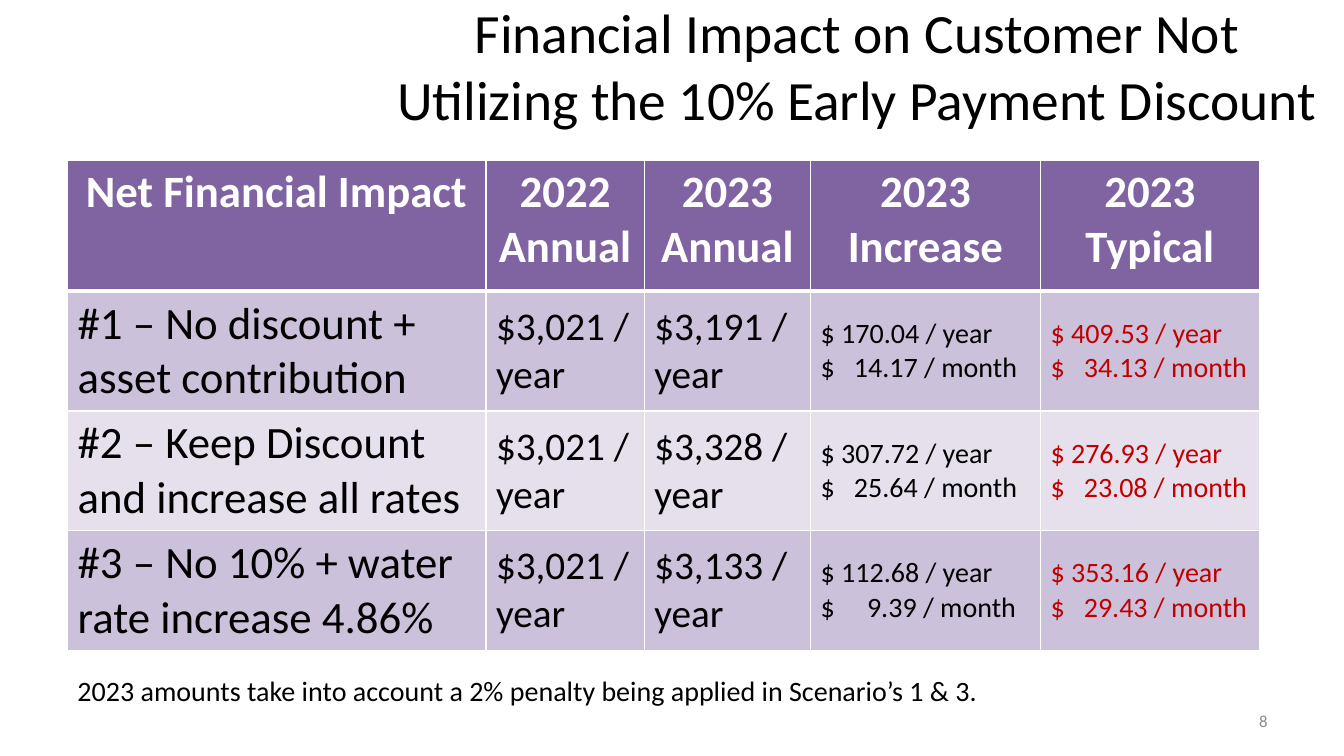
from dataclasses import dataclass
from typing import Optional

from pptx import Presentation
from pptx.dml.color import RGBColor
from pptx.enum.text import MSO_ANCHOR as ANCHOR, MSO_AUTO_SIZE as AUTO, PP_ALIGN as ALIGN
from pptx.oxml.ns import qn
from pptx.util import Inches, Pt
from lxml import etree

BLACK = RGBColor(0x00, 0x00, 0x00)
WHITE = RGBColor(0xFF, 0xFF, 0xFF)
GREY = RGBColor(0x8C, 0x8C, 0x8C)
RED = RGBColor(0xC0, 0x00, 0x00)
PURPLE = RGBColor(0x80, 0x64, 0xA2)
BAND_DARK = RGBColor(0xCC, 0xC1, 0xDA)
BAND_LIGHT = RGBColor(0xE6, 0xE0, 0xEC)
FONT = "Calibri"

COL_WIDTHS = (4.15, 1.57, 1.65, 2.28, 2.17)
HEADER_HEIGHT, ROW_HEIGHT = 1.3, 1.17
HEADERS = ("Net Financial Impact", "2022\nAnnual", "2023\nAnnual", "2023 Increase", "2023\nTypical")


@dataclass(frozen=True)
class Amount:
    year: str
    month: str


@dataclass(frozen=True)
class Scenario:
    name: str
    annual_2022: str
    annual_2023: str
    increase: Amount
    typical: Amount


@dataclass(frozen=True)
class Style:
    size: float
    color: RGBColor = BLACK
    bold: bool = False
    align: Optional[ALIGN] = None


SCENARIOS = (
    Scenario("#1 – No discount + asset contribution", "$3,021", "$3,191",
             Amount("170.04", "14.17"), Amount("409.53", "34.13")),
    Scenario("#2 – Keep Discount and increase all rates", "$3,021", "$3,328",
             Amount("307.72", "25.64"), Amount("276.93", "23.08")),
    Scenario("#3 – No 10% + water rate increase 4.86%", "$3,021", "$3,133",
             Amount("112.68", "9.39"), Amount("353.16", "29.43")),
)
HEADER = Style(32, WHITE, True, ALIGN.CENTER)
BODY = (Style(32), Style(28), Style(28), Style(20), Style(20, RED))


def set_text(tf, text: str, style: Style) -> None:
    tf.text = text
    for p in tf.paragraphs:
        if style.align is not None:
            p.alignment = style.align
        for r in p.runs:
            r.font.name = FONT
            r.font.size = Pt(style.size)
            r.font.bold = style.bold
            r.font.color.rgb = style.color


def add_tab(p, position: float) -> None:
    tabs = etree.SubElement(p._p.get_or_add_pPr(), qn("a:tabLst"))
    etree.SubElement(tabs, qn("a:tab"), pos=str(Inches(position)), algn="l")


def set_border(cell, side: str, width: float) -> None:
    ln = etree.Element(qn(f"a:{side}"), w=str(Pt(width)))
    fill = etree.SubElement(ln, qn("a:solidFill"))
    etree.SubElement(fill, qn("a:srgbClr"), val=str(WHITE))
    tc_pr = cell._tc.get_or_add_tcPr()
    tc_pr.insert(len(tc_pr.findall("*")) - 1, ln)


def fill_cell(cell, text: str, style: Style, fill: RGBColor, row: int) -> None:
    set_text(cell.text_frame, text, style)
    cell.vertical_anchor = ANCHOR.MIDDLE if row else ANCHOR.TOP
    cell.fill.solid()
    cell.fill.fore_color.rgb = fill
    for side in ("lnL", "lnR", "lnT", "lnB"):
        thick = (row, side) in ((0, "lnB"), (1, "lnT"))
        set_border(cell, side, 3 if thick else 1)


def amount_text(amount: Amount) -> str:
    return f"$ {amount.year} / year\n$\t{amount.month} / month"


def add_impact_table(slide) -> None:
    height = HEADER_HEIGHT + ROW_HEIGHT * len(SCENARIOS)
    table = slide.shapes.add_table(len(SCENARIOS) + 1, len(COL_WIDTHS), Inches(0.67), Inches(1.59),
                                   Inches(sum(COL_WIDTHS)), Inches(height)).table
    for col, width in zip(table.columns, COL_WIDTHS):
        col.width = Inches(width)
    for i, row in enumerate(table.rows):
        row.height = Inches(ROW_HEIGHT if i else HEADER_HEIGHT)
    for c, text in enumerate(HEADERS):
        fill_cell(table.cell(0, c), text, HEADER, PURPLE, 0)
    for i, s in enumerate(SCENARIOS, 1):
        texts = (s.name, f"{s.annual_2022} /\vyear", f"{s.annual_2023} /\vyear",
                 amount_text(s.increase), amount_text(s.typical))
        for c, (text, style) in enumerate(zip(texts, BODY)):
            fill_cell(table.cell(i, c), text, style, BAND_DARK if i % 2 else BAND_LIGHT, i)
        for c, amount in ((3, s.increase), (4, s.typical)):
            position = 0.33 if len(amount.month) == 5 else 0.46
            add_tab(table.cell(i, c).text_frame.paragraphs[1], position)


def add_text(slide, box: tuple, text: str, style: Style, anchor: ANCHOR, wrap: bool) -> None:
    tf = slide.shapes.add_textbox(*map(Inches, box)).text_frame
    tf.word_wrap = wrap
    tf.vertical_anchor = anchor
    set_text(tf, text, style)


def add_title(slide) -> None:
    title = slide.shapes.title
    title.left, title.top, title.width, title.height = map(Inches, (3.67, 0.02, 9.66, 1.25))
    tf = title.text_frame
    tf.word_wrap = True
    tf.auto_size = AUTO.NONE
    tf.vertical_anchor = ANCHOR.MIDDLE
    set_text(tf, "Financial Impact on Customer Not Utilizing the 10% Early Payment Discount",
             Style(39.6, align=ALIGN.CENTER))


def main() -> None:
    prs = Presentation()
    prs.slide_width, prs.slide_height = Inches(13.33), Inches(7.5)
    slide = prs.slides.add_slide(prs.slide_layouts[5])
    add_title(slide)
    add_impact_table(slide)
    add_text(slide, (9.56, 6.95, 3.11, 0.4), "8", Style(12, GREY, align=ALIGN.RIGHT), ANCHOR.MIDDLE, True)
    add_text(slide, (0.67, 6.63, 9.21, 0.44),
             "2023 amounts take into account a 2% penalty being applied in Scenario’s 1 & 3.",
             Style(20), ANCHOR.TOP, False)
    prs.save("out.pptx")


if __name__ == "__main__":
    main()
